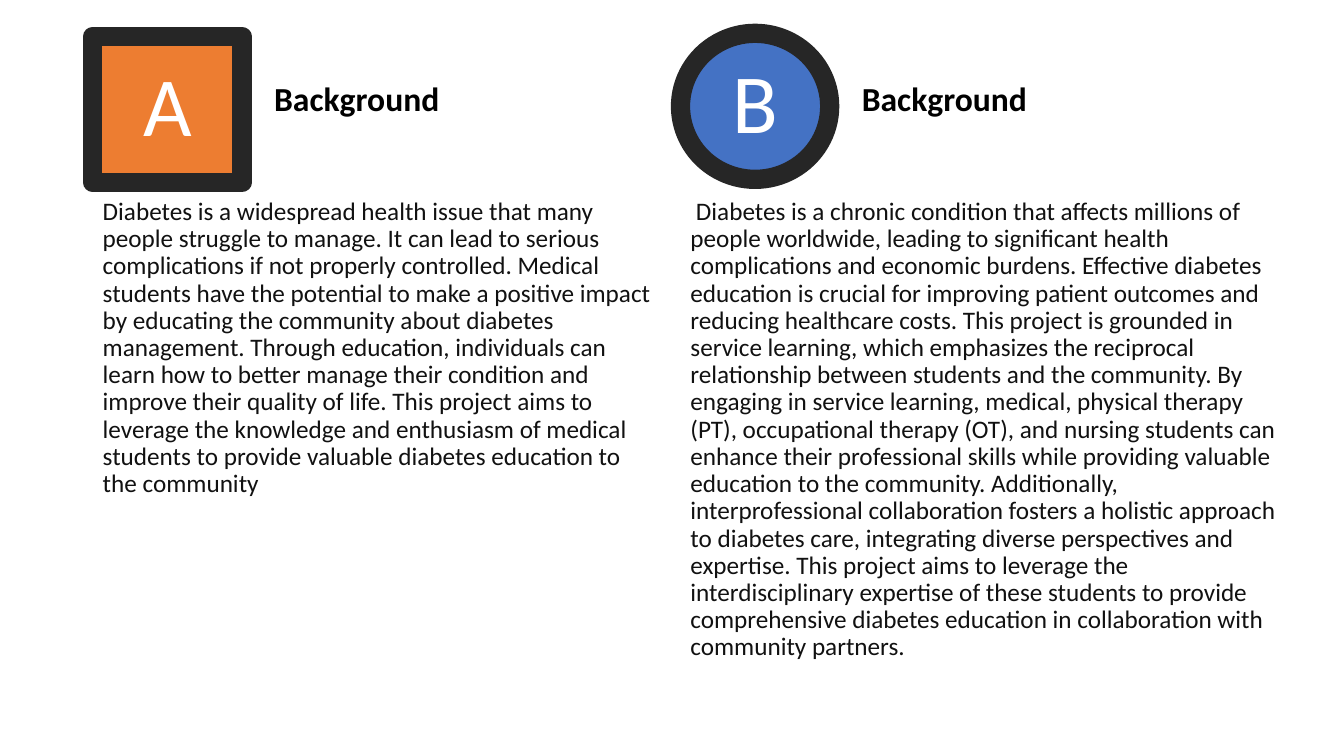
from lxml.etree import SubElement
from pptx import Presentation
from pptx.dml.color import RGBColor
from pptx.enum.shapes import MSO_SHAPE as Form
from pptx.enum.text import MSO_ANCHOR as Anchor, PP_ALIGN as Align
from pptx.oxml.ns import qn
from pptx.util import Cm, Pt

HUES = {
    "orange": "ED7D31",
    "blue": "4472C4",
    "rim": "262626",
    "white": "FFFFFF",
    "head": "000000",
    "body": "111111",
}
TEXT_A = [
    "Diabetes is a widespread health issue that many people struggle to manage.",
    "It can lead to serious complications if not properly controlled.",
    "Medical students have the potential to make a positive impact by educating "
    "the community about diabetes management.",
    "Through education, individuals can learn how to better manage their "
    "condition and improve their quality of life.",
    "This project aims to leverage the knowledge and enthusiasm of medical "
    "students to provide valuable diabetes education to the community",
]
TEXT_B = [
    "Diabetes is a chronic condition that affects millions of people worldwide, "
    "leading to significant health complications and economic burdens.",
    "Effective diabetes education is crucial for improving patient outcomes and "
    "reducing healthcare costs.",
    "This project is grounded in service learning, which emphasizes the "
    "reciprocal relationship between students and the community.",
    "By engaging in service learning, medical, physical therapy (PT), "
    "occupational therapy (OT), and nursing students can enhance their "
    "professional skills while providing valuable education to the community.",
    "Additionally, interprofessional collaboration fosters a holistic approach "
    "to diabetes care, integrating diverse perspectives and expertise.",
    "This project aims to leverage the interdisciplinary expertise of these "
    "students to provide comprehensive diabetes education in collaboration "
    "with community partners.",
]


def color(name):
    return RGBColor.from_string(HUES[name])


def write(shape, text, size, hue, bold=False, anchor=Anchor.TOP,
          align=Align.LEFT, indent=0):
    frame = shape.text_frame
    frame.word_wrap = True
    frame.vertical_anchor = anchor
    para = frame.paragraphs[0]
    para.alignment = align
    para.line_spacing = 0.9
    if indent:
        para._p.get_or_add_pPr().set("indent", str(Cm(indent)))
    run = para.add_run()
    run.text = text
    font = run.font
    font.name = "Calibri"
    font.size = Pt(size)
    font.bold = bold
    font.color.rgb = color(hue)


def add_badge(slide, box, form, letter, hue):
    """Thick-rimmed shape with one large letter."""
    badge = slide.shapes.add_shape(form, *map(Cm, box))
    badge.shadow.inherit = False
    badge.fill.solid()
    badge.fill.fore_color.rgb = color(hue)
    badge.line.color.rgb = color("rim")
    badge.line.width = Pt(13.75)
    SubElement(badge.line._get_or_add_ln(), qn("a:round"))
    write(badge, letter, 60, "white", anchor=Anchor.MIDDLE, align=Align.CENTER)


def add_panel(slide, box, form, letter, hue, drop, text, indent=0):
    """Badge and heading above a paragraph; drop lowers the badge."""
    left, top, width, height = box
    shapes = slide.shapes
    body = shapes.add_textbox(Cm(left), Cm(top + 4.04), Cm(width), Cm(height - 4.04))
    write(body, " ".join(text), 18, "body", indent=indent)
    head = shapes.add_textbox(Cm(left + 4.32), Cm(top), Cm(width - 4.32), Cm(2.29))
    write(head, "Background", 24, "head", bold=True, anchor=Anchor.BOTTOM)
    add_badge(slide, (left, top + drop, 3.76, 3.68), form, letter, hue)


def main():
    deck = Presentation()
    deck.slide_width, deck.slide_height = Cm(33.87), Cm(19.05)
    slide = deck.slides.add_slide(deck.slide_layouts[6])
    add_panel(slide, (2.34, 0.84, 14.33, 14.28), Form.RECTANGLE,
              "A", "orange", 0.08, TEXT_A)
    add_panel(slide, (17.15, 0.84, 15.37, 14.28), Form.OVAL,
              "B", "blue", 0, TEXT_B, indent=0.14)
    deck.save("out.pptx")


if __name__ == "__main__":
    main()
